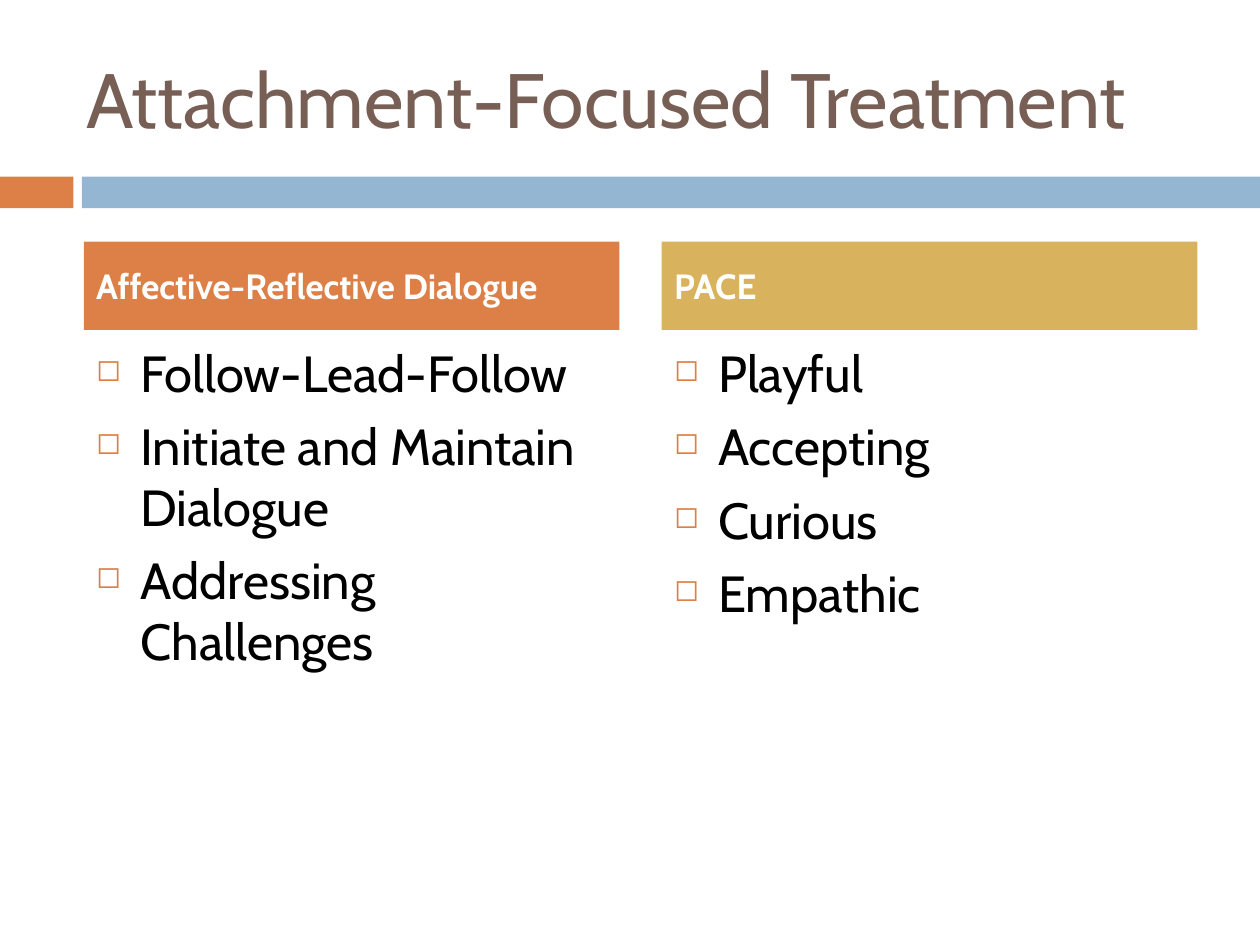
"""Build the Attachment-Focused Treatment slide with two headed bullet columns."""
from lxml.etree import SubElement
from pptx import Presentation
from pptx.dml.color import RGBColor
from pptx.enum.shapes import MSO_SHAPE as Shape
from pptx.enum.text import MSO_ANCHOR as Anchor, PP_ALIGN as Align
from pptx.oxml.ns import qn
from pptx.util import Cm, Pt

ORANGE = RGBColor(0xDD, 0x80, 0x47)
BLUE = RGBColor(0x94, 0xB6, 0xD2)
GOLD = RGBColor(0xD8, 0xB2, 0x5C)
BROWN = RGBColor(0x77, 0x5F, 0x55)
WHITE = RGBColor(0xFF, 0xFF, 0xFF)
BLACK = RGBColor(0, 0, 0)

TITLE = "Attachment-Focused Treatment"
COLUMNS = [
    ("Affective-Reflective Dialogue", ORANGE,
     ["Follow-Lead-Follow", "Initiate and Maintain Dialogue", "Addressing Challenges"]),
    ("PACE", GOLD, ["Playful", "Accepting", "Curious", "Empathic"]),
]
BANDS = [(0, 1.48, ORANGE), (1.65, 23.75, BLUE)]

TITLE_FONT = {"name": "Cabin", "size": Pt(44), "bold": False}
HEADING_FONT = {"name": "Cabin", "size": Pt(20), "bold": True}
ITEM_FONT = {"name": "Cabin", "size": Pt(29), "bold": False}

BAND_TOP, BAND_HEIGHT = 3.56, 0.64
COLUMN_LEFT, COLUMN_WIDTH, COLUMN_GAP = 1.69, 10.8, 0.85
HEADING_TOP, HEADING_HEIGHT = 4.87, 1.78
ITEMS_TOP, ITEMS_HEIGHT = 6.77, 9.95
BULLET_INDENT = Cm(0.89)


def box(*lengths):
    return [Cm(length) for length in lengths]


def add_block(slide, bounds, color):
    block = slide.shapes.add_shape(Shape.RECTANGLE, *box(*bounds))
    block.shadow.inherit = False
    block.fill.solid()
    block.fill.fore_color.rgb = color
    block.line.fill.background()
    return block


def write(frame, lines, font_values, color, anchor, space=0):
    frame.word_wrap = True
    frame.vertical_anchor = anchor
    for number, line in enumerate(lines):
        paragraph = frame.add_paragraph() if number else frame.paragraphs[0]
        paragraph.alignment = Align.LEFT
        paragraph.space_before = Pt(space)
        run = paragraph.add_run()
        run.text = line
        for attribute, value in font_values.items():
            setattr(run.font, attribute, value)
        run.font.color.rgb = color


def add_bullet(paragraph):
    properties = paragraph._p.get_or_add_pPr()
    properties.set("marL", str(BULLET_INDENT))
    properties.set("indent", str(-BULLET_INDENT))
    bullet_color = SubElement(properties, qn("a:buClr"))
    SubElement(bullet_color, qn("a:srgbClr"), val=str(ORANGE))
    SubElement(properties, qn("a:buSzPct"), val="60000")
    SubElement(properties, qn("a:buChar"), char="◻")


def main():
    deck = Presentation()
    deck.slide_width, deck.slide_height = box(25.4, 19.05)
    slide = deck.slides.add_slide(deck.slide_layouts[5])

    title = slide.shapes.title
    title.left, title.top, title.width, title.height = box(1.48, 0.76, 22.66, 2.41)
    write(title.text_frame, [TITLE], TITLE_FONT, BROWN, Anchor.MIDDLE)

    for left, width, color in BANDS:
        add_block(slide, (left, BAND_TOP, width, BAND_HEIGHT), color)

    for number, (heading, color, items) in enumerate(COLUMNS):
        left = COLUMN_LEFT + number * (COLUMN_WIDTH + COLUMN_GAP)
        header = add_block(slide, (left, HEADING_TOP, COLUMN_WIDTH, HEADING_HEIGHT), color)
        write(header.text_frame, [heading], HEADING_FONT, WHITE, Anchor.MIDDLE, 7)
        body = slide.shapes.add_textbox(*box(left, ITEMS_TOP, COLUMN_WIDTH, ITEMS_HEIGHT))
        write(body.text_frame, items, ITEM_FONT, BLACK, Anchor.TOP, 7)
        for paragraph in body.text_frame.paragraphs:
            add_bullet(paragraph)

    deck.save("out.pptx")


if __name__ == "__main__":
    main()
